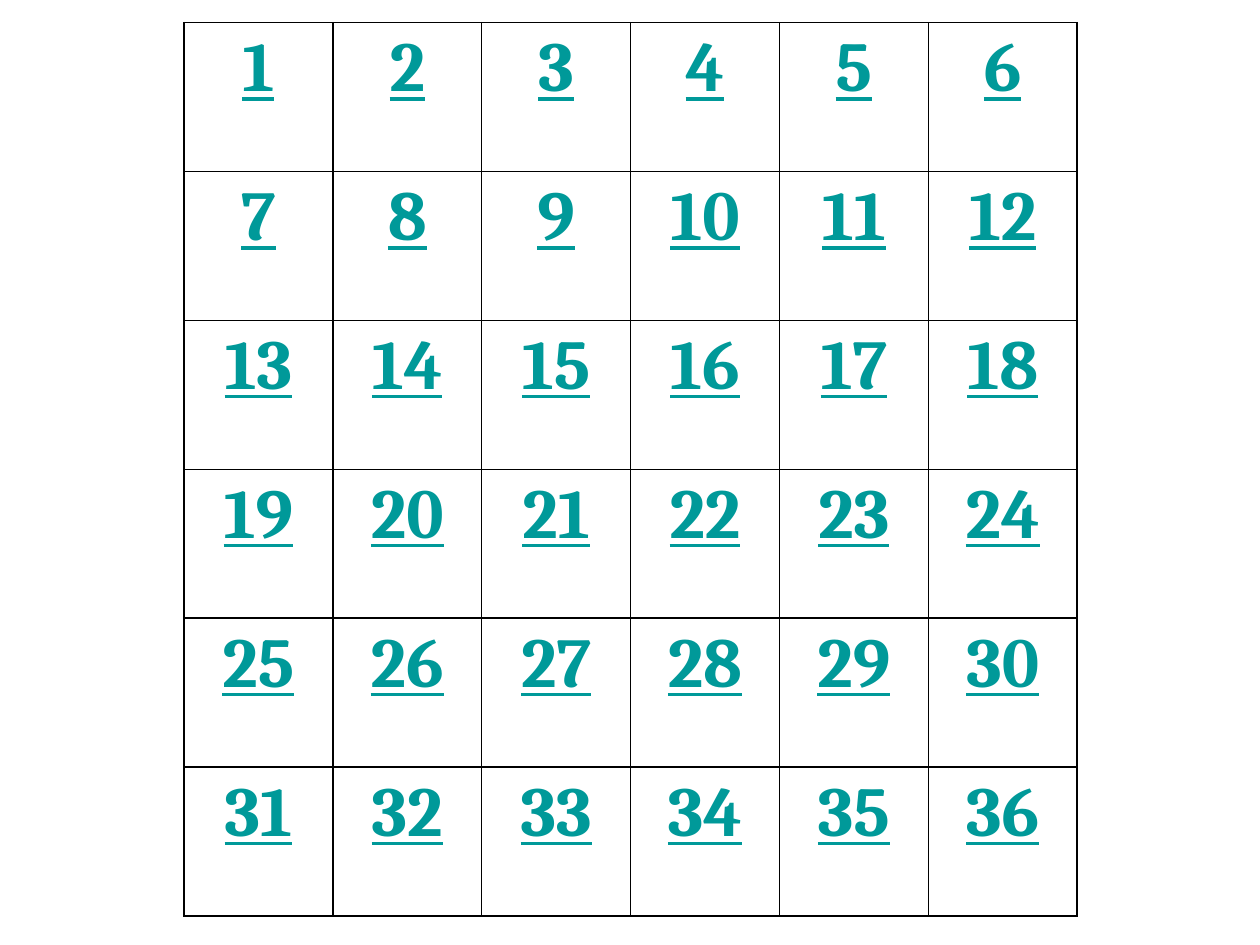
from lxml.etree import SubElement
from pptx import Presentation
from pptx.dml.color import RGBColor
from pptx.enum.text import PP_ALIGN as Align
from pptx.oxml import parse_xml
from pptx.oxml.ns import nsdecls, qn
from pptx.util import Inches, Pt

GRID_SIZE = 6
TEAL, BLACK, WHITE = "009999", "000000", "FFFFFF"


def color(hex_string):
    return RGBColor.from_string(hex_string)


def line_xml(tag, width, hex_string):
    return parse_xml(
        f'<a:{tag} {nsdecls("a")} w="{Pt(width)}"><a:solidFill>'
        f'<a:srgbClr val="{hex_string}"/></a:solidFill></a:{tag}>'
    )


presentation = Presentation()
presentation.slide_width = Inches(10)
presentation.slide_height = Inches(7.5)
slide = presentation.slides.add_slide(presentation.slide_layouts[6])

side = Inches(7.09)
table = slide.shapes.add_table(
    GRID_SIZE, GRID_SIZE, Inches(1.46), Inches(0.18), side, side
).table
table.first_row = False
table.horz_banding = False

for number in range(1, GRID_SIZE**2 + 1):
    row, column = divmod(number - 1, GRID_SIZE)
    cell = table.cell(row, column)
    cell_properties = cell._tc.get_or_add_tcPr()
    for border in ("lnL", "lnR", "lnT", "lnB"):
        cell_properties.append(line_xml(border, 1, BLACK))
    cell.fill.background()

    paragraph = cell.text_frame.paragraphs[0]
    paragraph.alignment = Align.CENTER
    run = paragraph.add_run()
    run.text = str(number)
    run.font.name = "Cambria"
    run.font.size = Pt(40)
    run.font.bold = True
    run.font.underline = True
    run.font.color.rgb = color(TEAL)
    run._r.get_or_add_rPr().insert(0, line_xml("ln", 1.4, WHITE))

presentation.save("out.pptx")
